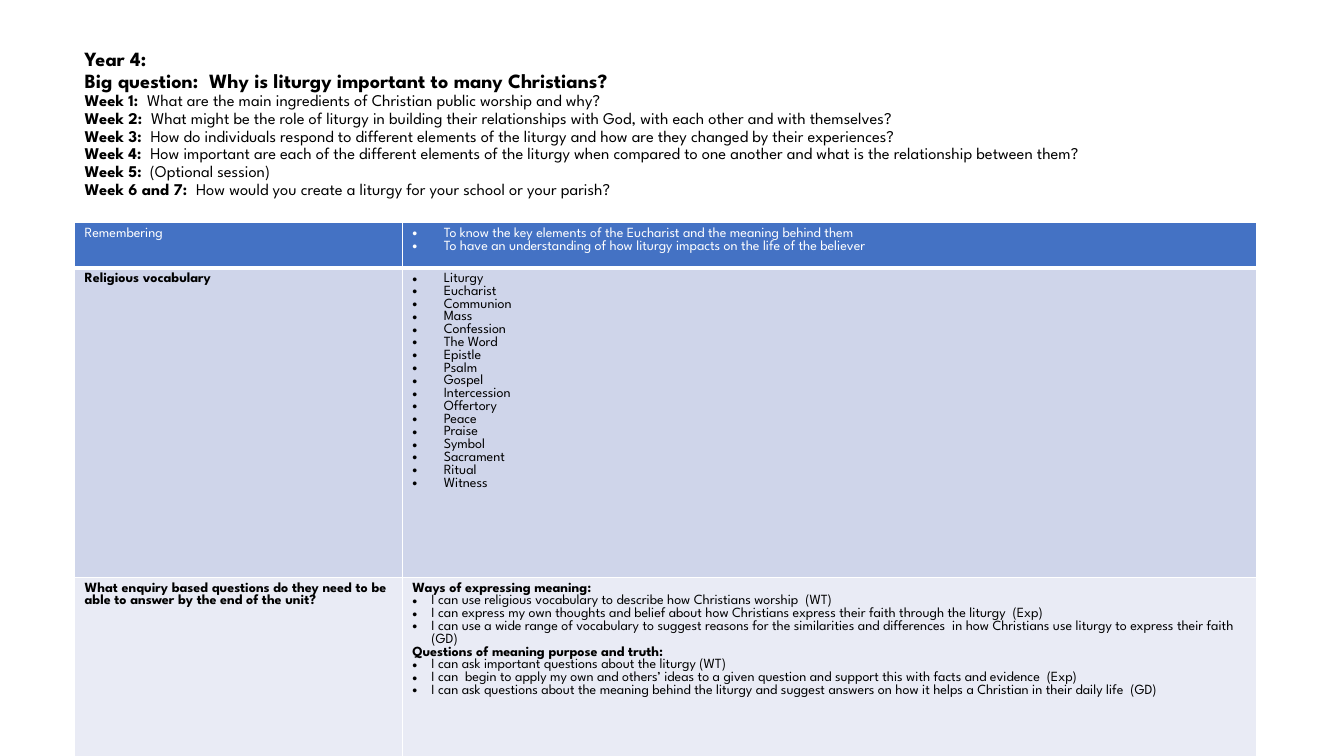
from lxml.etree import SubElement
from pptx import Presentation
from pptx.dml.color import RGBColor
from pptx.enum.text import MSO_ANCHOR, MSO_AUTO_SIZE, PP_ALIGN
from pptx.oxml.ns import qn
from pptx.util import Cm, Pt

FONT = "League Spartan"
HUES = {"ink": "000000", "white": "FFFFFF", "head": "4472C4",
        "band": "CFD5EA", "pale": "E9EBF5"}

HEADS = ["Year 4:",
         "Big question:  Why is liturgy important to many Christians?"]
WEEKS = [
    ("Week 1:  ", "What are the main ingredients of Christian public worship and why?"),
    ("Week 2:  ", "What might be the role of liturgy in building their relationships "
                  "with God, with each other and with themselves?"),
    ("Week 3:  ", "How do individuals respond to different elements of the liturgy "
                  "and how are they changed by their experiences?"),
    ("Week 4:  ", "How important are each of the different elements of the liturgy when "
                  "compared to one another and what is the relationship between them?"),
    ("Week 5:", "  (Optional session)"),
    ("Week 6 and 7:  ", "How would you create a liturgy for your school or your parish?"),
]
GOALS = ["To know the key elements of the Eucharist and the meaning behind them",
         "To have an understanding of how liturgy impacts on the life of the believer"]
WORDS = ["Liturgy", "Eucharist", "Communion", "Mass", "Confession", "The Word",
         "Epistle", "Psalm", "Gospel", "Intercession", "Offertory", "Peace",
         "Praise", "Symbol", "Sacrament", "Ritual", "Witness"]
ASKS = {
    "Ways of expressing meaning:": [
        "I can use religious vocabulary to describe how Christians worship  (WT)",
        "I can express my own thoughts and belief about how Christians express "
        "their faith through the liturgy  (Exp)",
        "I can use a wide range of vocabulary to suggest reasons for the similarities and "
        "differences  in how Christians use liturgy to express their faith  (GD)"],
    "Questions of meaning purpose and truth:": [
        "I can ask important questions about the liturgy (WT)",
        "I can  begin to apply my own and others’ ideas to a given question and "
        "support this with facts and evidence  (Exp)",
        "I can ask questions about the meaning behind the liturgy and suggest answers "
        "on how it helps a Christian in their daily life  (GD)"],
}


def tint(name):
    return RGBColor.from_string(HUES[name])


def write(para, text, size=10, hue="ink", bold=False, dent=None):
    """Add a run; dent gives the paragraph a hanging bullet."""
    run = para.add_run()
    run.text = text
    font = run.font
    font.name, font.size, font.bold = FONT, Pt(size), bold
    font.color.rgb = tint(hue)
    if dent is not None:
        props = para._p.get_or_add_pPr()
        props.set("marL", str(dent))
        props.set("indent", str(-dent))
        SubElement(props, qn("a:buFont"), typeface="Arial")
        SubElement(props, qn("a:buChar"), char="•")


def lines(frame):
    """Yield the first paragraph, then new ones."""
    yield frame.paragraphs[0]
    while True:
        yield frame.add_paragraph()


def edge(cell, side, width):
    line = SubElement(cell._tc.get_or_add_tcPr(), qn("a:" + side), w=str(Pt(width)))
    fill = SubElement(line, qn("a:solidFill"))
    SubElement(fill, qn("a:srgbClr"), val=HUES["white"])


def title(slide, left, top, width, height):
    box = slide.shapes.title
    box.left, box.top, box.width, box.height = left, top, width, height
    frame = box.text_frame
    frame.word_wrap = True
    frame.auto_size = MSO_AUTO_SIZE.NONE
    frame.vertical_anchor = MSO_ANCHOR.TOP
    frame.margin_top = Cm(0.08)
    paras = lines(frame)
    rows = [(head, "", 14.4, 15.7) for head in HEADS]
    rows += [(week, ask, 11.7, 12.65) for week, ask in WEEKS]
    for lead, rest, size, pitch in rows:
        para = next(paras)
        para.alignment = PP_ALIGN.LEFT
        para.line_spacing = Pt(pitch)
        para.space_before = Pt(0)
        write(para, lead, size=size, bold=True)
        if rest:
            write(para, rest, size=size)


def table(slide, left, top, width, height):
    grid = slide.shapes.add_table(3, 2, left, top, width, height).table
    grid.columns[0].width = Cm(8.26)
    grid.columns[1].width = width - Cm(8.26)
    tall = [Cm(1.14), Cm(7.8)]
    tall.append(height - sum(tall))
    for row, high in zip(grid.rows, tall):
        row.height = high

    # Borders and fills
    for row, hue in enumerate(["head", "band", "pale"]):
        for cell in grid.rows[row].cells:
            for side in ["lnL", "lnR", "lnT", "lnB"]:
                edge(cell, side, 3 if row == 0 and side == "lnB" else 1)
            cell.fill.solid()
            cell.fill.fore_color.rgb = tint(hue)

    # Left column
    labels = [("Remembering", "white", False),
              ("Religious vocabulary", "ink", True),
              ("What enquiry based questions do they need to be able to answer "
               "by the end of the unit?", "ink", True)]
    for row, (text, hue, bold) in enumerate(labels):
        write(grid.cell(row, 0).text_frame.paragraphs[0], text, hue=hue, bold=bold)

    # Right column
    for row, (items, hue) in enumerate([(GOALS, "white"), (WORDS, "ink")]):
        for item, para in zip(items, lines(grid.cell(row, 1).text_frame)):
            write(para, item, hue=hue, dent=Cm(0.79))
    paras = lines(grid.cell(2, 1).text_frame)
    for head, items in ASKS.items():
        write(next(paras), head, bold=True)
        for item in items:
            write(next(paras), item, dent=Cm(0.48))


def main():
    deck = Presentation()
    deck.slide_width, deck.slide_height = Cm(33.87), Cm(19.05)
    slide = deck.slides.add_slide(deck.slide_layouts[5])
    title(slide, Cm(1.88), Cm(1.14), Cm(25.68), Cm(3.53))
    table(slide, Cm(1.88), Cm(5.61), Cm(29.79), Cm(13.77))
    deck.save("out.pptx")


if __name__ == "__main__":
    main()
